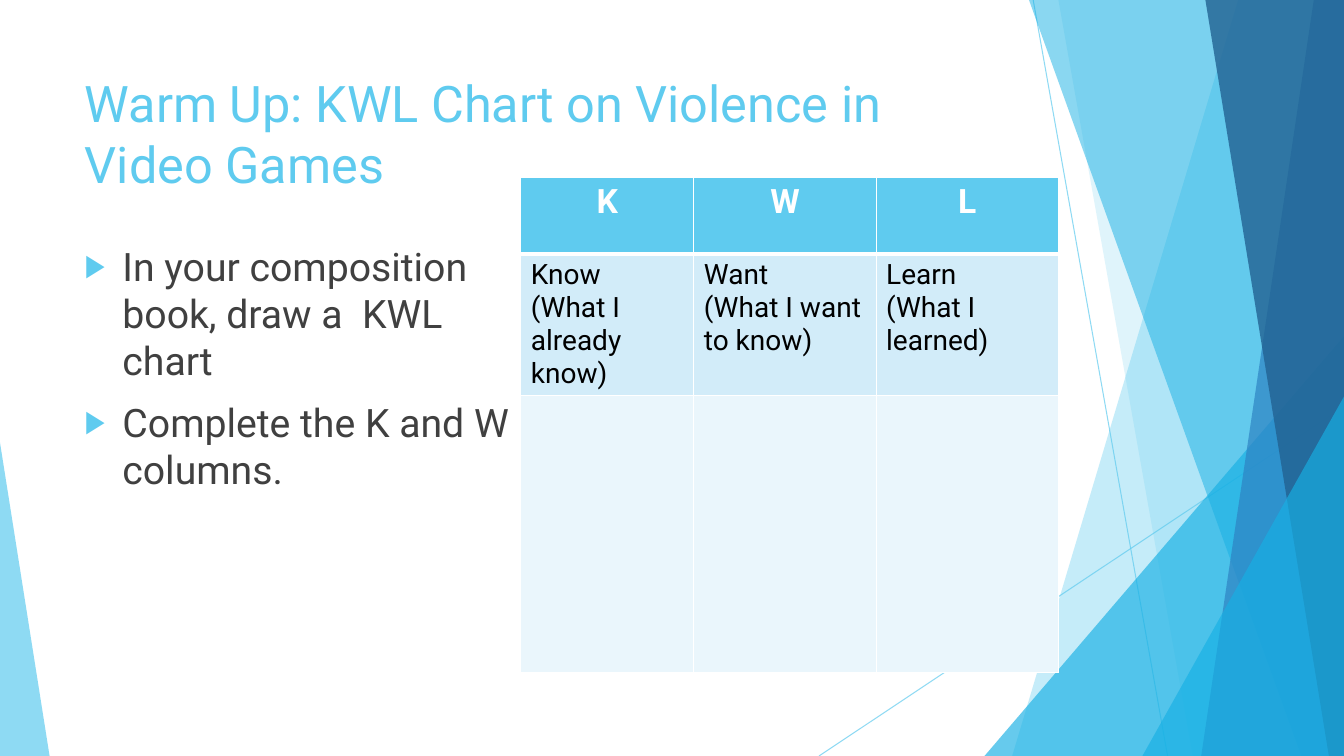
import pptx
import pptx.util
import pptx.dml.color
import pptx.enum.shapes
import pptx.enum.text
import pptx.oxml
import pptx.oxml.ns

RGBColor = pptx.dml.color.RGBColor
WHITE = RGBColor(0xFF, 0xFF, 0xFF)
BLACK = RGBColor(0x00, 0x00, 0x00)
CHARCOAL = RGBColor(0x40, 0x40, 0x40)
SKY = RGBColor(0x5F, 0xCB, 0xEF)
CYAN = RGBColor(0x17, 0xB0, 0xE4)
BLUE = RGBColor(0x2E, 0x83, 0xC3)
NAVY = RGBColor(0x22, 0x62, 0x92)
PALE = RGBColor(0xD2, 0xEC, 0xF9)
PALEST = RGBColor(0xEA, 0xF6, 0xFC)

FONT = "Roboto"
COLUMNS, ROWS = 160, 90
Pt = pptx.util.Pt


class KwlSlide:
    def __init__(self, presentation):
        self.column = presentation.slide_width / COLUMNS
        self.row = presentation.slide_height / ROWS
        self.slide = presentation.slides.add_slide(presentation.slide_layouts[5])
        self.shapes = self.slide.shapes

    def x(self, columns):
        return round(columns * self.column)

    def y(self, rows):
        return round(rows * self.row)

    def box(self, left, top, width, height):
        return self.x(left), self.y(top), self.x(width), self.y(height)

    def xml(self, parent, tag, **attributes):
        child = pptx.oxml.parse_xml(f"<{tag} {pptx.oxml.ns.nsdecls('a')}/>")
        for key, value in attributes.items():
            child.set(key, str(value))
        parent.append(child)
        return child

    def fade(self, element, opacity):
        color = next(element.iter(pptx.oxml.ns.qn("a:srgbClr")))
        self.xml(color, "a:alpha", val=opacity * 1000)

    def paint(self, shape, color, opacity):
        shape.shadow.inherit = False
        shape.line.fill.background()
        shape.fill.solid()
        shape.fill.fore_color.rgb = color
        self.fade(shape._element.spPr, opacity)

    def ray(self, start, end):
        ray = self.shapes.add_connector(
            pptx.enum.shapes.MSO_CONNECTOR.STRAIGHT,
            self.x(start[0]), self.y(start[1]), self.x(end[0]), self.y(end[1]))
        ray.line.color.rgb = SKY
        ray.line.width = Pt(0.75)
        properties = ray._element.spPr
        self.fade(properties, 70)
        self.xml(properties, "a:effectLst")

    def shard(self, top_left, bottom_left, color, opacity):
        builder = self.shapes.build_freeform(self.x(top_left), 0, scale=1.0)
        corners = [(COLUMNS, 0), (COLUMNS, ROWS), (bottom_left, ROWS)]
        builder.add_line_segments([(self.x(c), self.y(r)) for c, r in corners])
        self.paint(builder.convert_to_shape(), color, opacity)

    def wedge(self, left, top, width, apex, color, opacity):
        wedge = self.shapes.add_shape(
            pptx.enum.shapes.MSO_SHAPE.ISOSCELES_TRIANGLE,
            *self.box(left, top, width, ROWS - top))
        wedge.adjustments[0] = apex
        self.paint(wedge, color, opacity)

    def style(self, paragraph, size, color, bold=False):
        for run in paragraph.runs:
            run.font.name = FONT
            run.font.size = Pt(size)
            run.font.bold = bold
            run.font.color.rgb = color

    def frame(self, shape):
        frame = shape.text_frame
        frame.word_wrap = True
        frame.auto_size = pptx.enum.text.MSO_AUTO_SIZE.NONE
        frame.vertical_anchor = pptx.enum.text.MSO_ANCHOR.TOP
        return frame

    def title(self, text, left, top, width, height):
        title = self.shapes.title
        title.left, title.top, title.width, title.height = self.box(left, top, width, height)
        frame = self.frame(title)
        frame.text = text
        frame.paragraphs[0].alignment = pptx.enum.text.PP_ALIGN.LEFT
        self.style(frame.paragraphs[0], 36, SKY)

    def bullets(self, steps, left, top, width, height):
        frame = self.frame(self.shapes.add_textbox(*self.box(left, top, width, height)))
        frame.text = "\n".join(steps)
        indent = self.x(4.5)
        for paragraph in frame.paragraphs:
            paragraph.space_before = Pt(10)
            self.style(paragraph, 28, CHARCOAL)
            properties = paragraph._p.get_or_add_pPr()
            properties.set("marL", str(indent))
            properties.set("indent", str(-indent))
            self.xml(self.xml(properties, "a:buClr"), "a:srgbClr", val=SKY)
            self.xml(properties, "a:buSzPct", val=80000)
            self.xml(properties, "a:buFont", typeface=FONT)
            self.xml(properties, "a:buChar", char="▶")

    def borders(self, cell, top, bottom):
        properties = cell._tc.get_or_add_tcPr()
        for side, points in zip("LRTB", (1, 1, top, bottom)):
            line = self.xml(properties, f"a:ln{side}", w=Pt(points))
            self.xml(self.xml(line, "a:solidFill"), "a:srgbClr", val=WHITE)

    def chart(self, contents, left, top, widths, heights):
        table = self.shapes.add_table(
            len(heights), len(widths),
            *self.box(left, top, sum(widths), sum(heights))).table
        for column, width in zip(table.columns, widths):
            column.width = self.x(width)
        for row, height in zip(table.rows, heights):
            row.height = self.y(height)
        fills = (SKY, PALE, PALEST)
        for r, texts in enumerate(contents):
            header = r == 0
            for c, text in enumerate(texts):
                cell = table.cell(r, c)
                self.borders(cell, 3 if r == 1 else 1, 3 if header else 1)
                cell.fill.solid()
                cell.fill.fore_color.rgb = fills[r]
                cell.text = text
                for paragraph in cell.text_frame.paragraphs:
                    if header:
                        paragraph.alignment = pptx.enum.text.PP_ALIGN.CENTER
                        self.style(paragraph, 24, WHITE, bold=True)
                    else:
                        self.style(paragraph, 20, BLACK)


def main():
    presentation = pptx.Presentation()
    presentation.slide_width = pptx.util.Inches(13.33)
    presentation.slide_height = pptx.util.Inches(7.5)
    warm_up = KwlSlide(presentation)

    warm_up.ray((123, 0), (139, ROWS))
    warm_up.ray((COLUMNS, 48.4), (97.5, ROWS))
    warm_up.shard(147.4, 120.5, SKY, 36)
    warm_up.shard(126, 142, SKY, 20)
    warm_up.wedge(117.2, 40, 42.8, 1, CYAN, 66)
    warm_up.shard(122.5, 154.9, CYAN, 50)
    warm_up.shard(156.4, 143, BLUE, 70)
    warm_up.shard(143.5, 158.2, NAVY, 80)
    warm_up.wedge(136, 47.2, 24, 1, CYAN, 66)
    warm_up.wedge(0, 52.7, 5.9, 0, SKY, 70)

    warm_up.title("Warm Up: KWL Chart on Violence in Video Games", 8.9, 8, 112.8, 17.3)
    warm_up.bullets(
        ["In your composition book, draw a  KWL chart", "Complete the K and W columns."],
        8.9, 28.3, 55, 50.9)
    warm_up.chart(
        [["K", "W", "L"],
         ["Know\n(What I already know)", "Want\n(What I want to know)", "Learn\n(What I learned)"],
         ["", "", ""]],
        62, 21.1, [20.6, 21.7, 21.7], [9.1, 16.9, 33])

    presentation.save("out.pptx")


if __name__ == "__main__":
    main()
